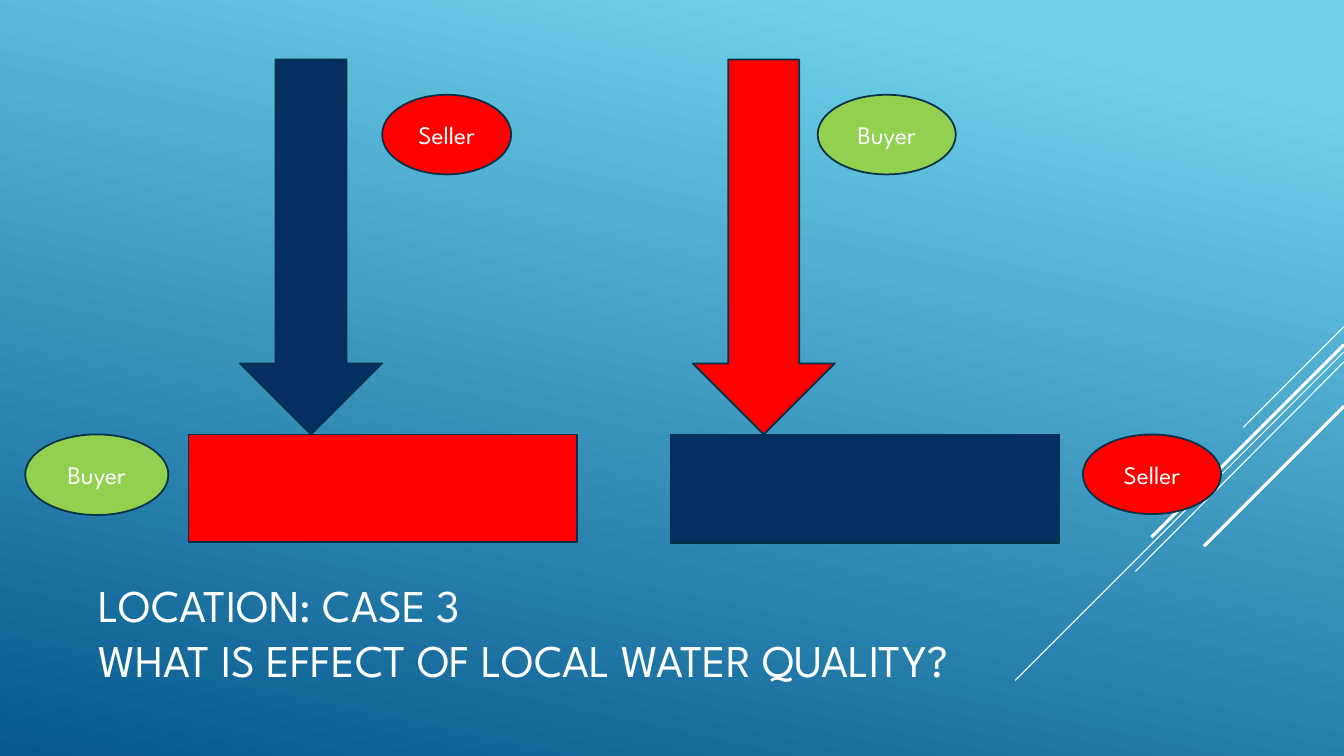
import dataclasses

import lxml.etree
import pptx
import pptx.dml.color
import pptx.enum.shapes
import pptx.enum.text
import pptx.oxml.ns
import pptx.slide
import pptx.text.text
import pptx.util

Inches = pptx.util.Inches
Pt = pptx.util.Pt
Kind = pptx.enum.shapes.MSO_SHAPE

FONT = "League Spartan"
COLORS = {
    "sky": "6ED2EB",
    "deep": "06588E",
    "white": "FFFFFF",
    "navy": "052F61",
    "edge": "043148",
    "red": "FF0000",
    "green": "92D050",
}


@dataclasses.dataclass
class Ray:
    top: float
    left: float
    base: float
    weight: float


@dataclasses.dataclass
class Block:
    kind: Kind
    left: float
    top: float
    width: float
    height: float
    color: str
    label: str = ""


RAYS = [
    Ray(3.24, 12.33, 4.24, 0.75),
    Ray(3.49, 10.07, 6.75, 0.75),
    Ray(3.59, 11.26, 5.67, 0.75),
    Ray(3.42, 11.42, 5.33, 2.25),
    Ray(4.03, 11.94, 5.42, 2.25),
]

BLOCKS = [
    Block(Kind.DOWN_ARROW, 2.38, 0.59, 1.41, 3.72, "navy"),
    Block(Kind.DOWN_ARROW, 6.87, 0.59, 1.41, 3.72, "red"),
    Block(Kind.OVAL, 3.79, 0.94, 1.28, 0.79, "red", "Seller"),
    Block(Kind.OVAL, 0.25, 4.31, 1.42, 0.8, "green", "Buyer"),
    Block(Kind.OVAL, 8.11, 0.94, 1.37, 0.79, "green", "Buyer"),
    Block(Kind.OVAL, 10.74, 4.31, 1.37, 0.79, "red", "Seller"),
    Block(Kind.RECTANGLE, 1.87, 4.31, 3.85, 1.07, "red"),
    Block(Kind.RECTANGLE, 6.65, 4.32, 3.85, 1.07, "navy"),
    Block(Kind.RECTANGLE, 6.65, 4.31, 3.85, 1.07, "navy"),
]


def tint(name: str) -> pptx.dml.color.RGBColor:
    return pptx.dml.color.RGBColor.from_string(COLORS[name])


def set_font(para: pptx.text.text._Paragraph, size: float) -> None:
    para.font.name = FONT
    para.font.size = Pt(size)
    para.font.color.rgb = tint("white")


def paint_back(slide: pptx.slide.Slide) -> None:
    fill = slide.background.fill
    fill.gradient()
    fill.gradient_angle = 360 - 102
    stops = [("sky", 0.1), ("deep", 1.0)]
    for stop, (name, place) in zip(fill.gradient_stops, stops):
        stop.color.rgb = tint(name)
        stop.position = place


def draw_ray(slide: pptx.slide.Slide, ray: Ray) -> None:
    line = slide.shapes.add_connector(
        pptx.enum.shapes.MSO_CONNECTOR.STRAIGHT,
        Inches(13.33), Inches(ray.top), Inches(ray.left), Inches(ray.base),
    )
    line.line.color.rgb = tint("white")
    line.line.width = Pt(ray.weight)
    lxml.etree.SubElement(line._element.spPr, pptx.oxml.ns.qn("a:effectLst"))


def draw_title(slide: pptx.slide.Slide) -> None:
    box = slide.shapes.add_textbox(
        Inches(0.88), Inches(5.44), Inches(9.33), Inches(1.65)
    )
    frame = box.text_frame
    frame.word_wrap = True
    frame.vertical_anchor = pptx.enum.text.MSO_ANCHOR.MIDDLE
    para = frame.paragraphs[0]
    para.line_spacing = Pt(39.3)
    set_font(para, 32.4)
    para.add_run().text = "LOCATION: CASE 3"
    para.add_line_break()
    para.add_run().text = "WHAT IS EFFECT OF LOCAL WATER QUALITY?"


def draw_block(slide: pptx.slide.Slide, block: Block) -> None:
    shape = slide.shapes.add_shape(
        block.kind, Inches(block.left), Inches(block.top),
        Inches(block.width), Inches(block.height),
    )
    shape.shadow.inherit = False
    shape.fill.solid()
    shape.fill.fore_color.rgb = tint(block.color)
    shape.line.color.rgb = tint("edge")
    shape.line.width = Pt(1.25)
    if block.label:
        frame = shape.text_frame
        frame.text = block.label
        frame.vertical_anchor = pptx.enum.text.MSO_ANCHOR.MIDDLE
        para = frame.paragraphs[0]
        para.alignment = pptx.enum.text.PP_ALIGN.CENTER
        set_font(para, 18)


def main() -> None:
    deck = pptx.Presentation()
    deck.slide_width = Inches(13.33)
    deck.slide_height = Inches(7.5)
    slide = deck.slides.add_slide(deck.slide_layouts[6])
    paint_back(slide)
    for ray in RAYS:
        draw_ray(slide, ray)
    draw_title(slide)
    for block in BLOCKS:
        draw_block(slide, block)
    deck.save("out.pptx")


if __name__ == "__main__":
    main()
